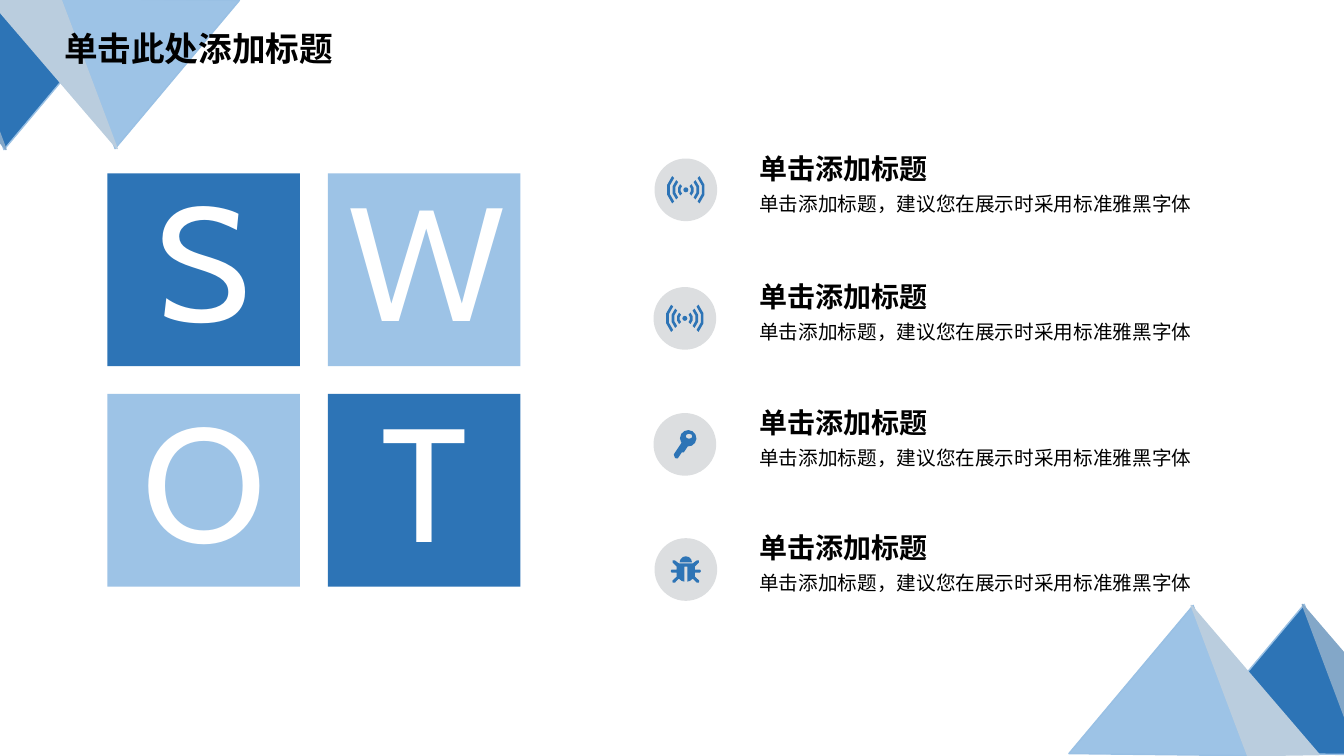
from dataclasses import dataclass
from math import cos, radians, sin

from lxml import etree
from pptx import Presentation
from pptx import util as u
from pptx.dml.color import RGBColor
from pptx.enum import shapes, text
from pptx.oxml.ns import qn

Point = tuple[float, float]
Contour = list[Point]
Part = list[Contour]  # the first contour is the outline, any others are holes or islands

# The slide is a grid of 160 x 90 square cells; all lengths are in cells
COLS, ROWS = 160, 90
CELL = u.Inches(7.5) / ROWS


@dataclass(frozen=True)
class Theme:
    dark: str = "2D74B6"
    light: str = "9DC3E6"
    dark_side: str = "83A7C8"
    light_side: str = "BACDDE"
    edge: str = "99C0E4"
    disc: str = "DCDEE0"
    ink: str = "000000"
    white: str = "FFFFFF"
    font: str = "Noto Sans CJK SC"
    letter_font: str = "Cabin"
    title: int = 24
    heading: int = 20
    body: int = 14
    letter: int = 115


T = Theme()


@dataclass(frozen=True)
class Pyramid:
    apex: Point
    front: str
    side: str


@dataclass(frozen=True)
class Tile:
    letter: str
    col: int
    row: int
    fill: str


@dataclass(frozen=True)
class Item:
    left: float
    top: float
    icon: list[Part]


@dataclass(frozen=True)
class Style:
    size: int
    color: str = T.ink
    font: str = T.font
    bold: bool = False
    align: text.PP_ALIGN | None = None
    spacing: float | u.Pt | None = None
    before: int = 0


def arc(cx: float, cy: float, rx: float, ry: float, start: float, end: float, steps: int) -> Contour:
    angles = [radians(start + (end - start) * i / steps) for i in range(steps + 1)]
    return [(cx + rx * cos(a), cy + ry * sin(a)) for a in angles]


def mirror(points: Contour) -> Contour:
    return [(-x, y) for x, y in reversed(points)]


# Icons, measured from the centre of their disc
def signal_icon() -> list[Part]:
    parts = [[arc(0, 0, 0.3, 0.3, 0, 360, 8)]]
    for facing in (0, 180):
        for r in (0.96, 1.63, 2.3):
            inner = r - 0.33
            parts.append([arc(0, 0, r, r, facing - 45, facing + 45, 3)
                          + arc(0, 0, inner, inner, facing + 45, facing - 45, 3)])
    return parts


def key_icon() -> list[Part]:
    shaft = [(-0.36, -0.24), (-1.32, 1.2), (-1.2, 1.56), (-1.08, 1.68),
             (-0.84, 1.68), (-0.36, 0.96), (-0.12, 0.96), (0.36, 0.24)]
    return [[shaft + arc(0.4, -0.72, 0.98, 0.98, 95, -210, 10), arc(0.5, -0.96, 0.4, 0.3, 0, 360, 8)]]


def bug_icon() -> list[Part]:
    half = [(0.18, -0.36), (0.18, 1.44), (0.5, 1.35), (0.84, 1.08), (1.3, 1.56), (1.56, 1.56),
            (1.6, 1.32), (1.08, 0.84), (1.08, 0.36), (1.7, 0.36), (1.8, 0.18), (1.7, 0),
            (1.08, 0), (1.08, -0.36), (1.56, -0.84), (1.56, -1.1), (1.32, -1.1), (0.8, -0.72)]
    return [[half + mirror(half), arc(0, -0.84, 0.74, 0.74, 180, 360, 6)]]


# Drawing functions
def emu(cells: float) -> int:
    return round(cells * CELL)


def paint(sp, fill: str, line: str | None = None) -> None:
    sp.shadow.inherit = False
    sp.fill.solid()
    sp.fill.fore_color.rgb = RGBColor.from_string(fill)
    if line:
        sp.line.color.rgb = RGBColor.from_string(line)
        sp.line.width = u.Pt(1)
    else:
        sp.line.fill.background()


def add_preset(s, kind: shapes.MSO_SHAPE, x: float, y: float, size: float, fill: str) -> None:
    paint(s.shapes.add_shape(kind, emu(x), emu(y), emu(size), emu(size)), fill)


def add_outline(s, part: Part, origin: Point, fill: str, line: str | None = None) -> None:
    ox, oy = origin
    contours = [[(emu(ox + x), emu(oy + y)) for x, y in c] for c in part]
    fb = s.shapes.build_freeform(*contours[0][0])
    for i, c in enumerate(contours):
        if i:
            fb.move_to(*c[0])
        fb.add_line_segments(c[1:], close=True)
    paint(fb.convert_to_shape(), fill, line)


def add_text(s, words: str, box: tuple[float, float, float, float], st: Style,
             wrap: bool = True, middle: bool = False) -> None:
    tf = s.shapes.add_textbox(*map(emu, box)).text_frame
    tf.word_wrap = wrap
    if wrap:
        tf.margin_left = tf.margin_right = tf.margin_top = tf.margin_bottom = 0
    if middle:
        tf.vertical_anchor = text.MSO_ANCHOR.MIDDLE
    p = tf.paragraphs[0]
    p.text = words
    p.alignment, p.line_spacing, p.space_before = st.align, st.spacing, u.Pt(st.before)
    f = p.font
    f.size, f.bold, f.name = u.Pt(st.size), st.bold, st.font
    f.color.rgb = RGBColor.from_string(st.color)
    # East Asian characters take their own typeface
    etree.SubElement(p._p.pPr.find(qn("a:defRPr")), qn("a:ea"), typeface=st.font)


def add_pyramid(s, pyramid: Pyramid, flipped: bool) -> None:
    front = [(-14.8, 17.64), (0, 0), (6.48, 17.88)]
    side = [(6.48, 17.88), (-0.24, 0), (15, 17.76)]
    ax, ay = pyramid.apex
    origin, sign = ((155.76 - ax, 89.76 - ay), -1) if flipped else ((ax, ay), 1)
    for face, fill, line in ((front, pyramid.front, T.edge), (side, pyramid.side, pyramid.side)):
        add_outline(s, [[(sign * x, sign * y) for x, y in face]], origin, fill, line)


# Content
PYRAMIDS = [Pyramid((155.28, 71.95), T.dark, T.dark_side),
            Pyramid((142.05, 72.07), T.light, T.light_side)]
TILES = [Tile("S", 0, 0, T.dark), Tile("W", 1, 0, T.light),
         Tile("O", 0, 1, T.light), Tile("T", 1, 1, T.dark)]
ITEMS = [Item(77.92, 18.45, signal_icon()), Item(77.8, 33.75, signal_icon()),
         Item(77.8, 48.75, key_icon()), Item(77.92, 63.65, bug_icon())]
CENTER = text.PP_ALIGN.CENTER
TITLE = Style(T.title, bold=True, align=CENTER)
HEADING = Style(T.heading, bold=True, spacing=0.9, before=10)
BODY = Style(T.body, spacing=u.Pt(17), before=10)
LETTER = Style(T.letter, T.white, T.letter_font, align=CENTER, spacing=0.9, before=10)


def main() -> None:
    prs = Presentation()
    prs.slide_width, prs.slide_height = emu(COLS), emu(ROWS)
    s = prs.slides.add_slide(prs.slide_layouts[6])

    # Corner pyramids and title
    for flipped in (False, True):
        for pyramid in PYRAMIDS:
            add_pyramid(s, pyramid, flipped)
    add_text(s, "单击此处添加标题", (6.28, 2.76, 34.68, 6), TITLE, wrap=False)

    # SWOT tiles
    for t in TILES:
        x, y = 12.78 + 26.25 * t.col, 20.65 + 26.25 * t.row
        add_preset(s, shapes.MSO_SHAPE.RECTANGLE, x, y, 22.94, t.fill)
        add_text(s, t.letter, (x + 2.5, y + 6.35, 18, 10.2), LETTER, middle=True)

    # Icon list
    disc = 7.46
    for item in ITEMS:
        x, y = item.left, item.top + 0.42
        add_preset(s, shapes.MSO_SHAPE.OVAL, x, y, disc, T.disc)
        for part in item.icon:
            add_outline(s, part, (x + disc / 2, y + disc / 2), T.dark)
        add_text(s, "单击添加标题，建议您在展示时采用标准雅黑字体", (90.4, item.top + 4.34, 52.4, 9.1), BODY)
        add_text(s, "单击添加标题", (90.4, item.top, 42.6, 4.35), HEADING)

    prs.save("out.pptx")


if __name__ == "__main__":
    main()
